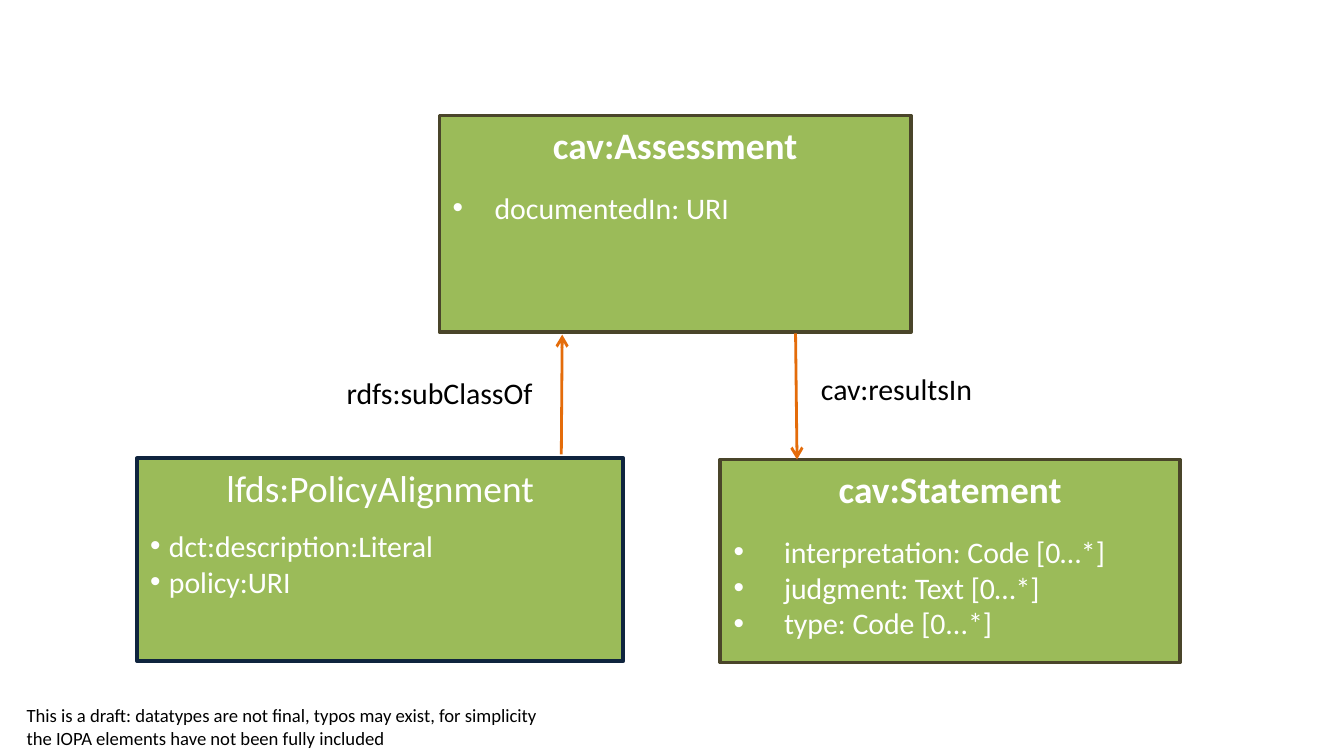
from lxml.etree import SubElement
from pptx import Presentation
from pptx.dml.color import RGBColor
from pptx.enum.shapes import MSO_CONNECTOR, MSO_SHAPE
from pptx.enum.text import MSO_ANCHOR, PP_ALIGN
from pptx.oxml.ns import qn
from pptx.util import Pt

FONT = "Calibri"
GREEN, BROWN, NAVY = "9BBB59", "4A452A", "0F243E"
ORANGE, WHITE, BLACK = "E46C0A", "FFFFFF", "000000"

CLASSES = [
    dict(title="cav:Assessment", bold=True, outline=BROWN, indent=22.5, gap=12,
         place=(235.4, 61.9, 252.7, 115.9), properties=["documentedIn: URI"]),
    dict(title="cav:Statement", bold=True, outline=BROWN, indent=27, gap=12,
         place=(385.9, 246.2, 246.2, 108.7),
         properties=["interpretation: Code [0…*]", "judgment: Text [0…*]", "type: Code [0...*]"]),
    dict(title="lfds:PolicyAlignment", bold=False, outline=NAVY, indent=10, gap=9.6,
         place=(73.4, 245.5, 260.6, 108.7),
         properties=["dct:description:Literal", "policy:URI"]),
]
ARROWS = [(426.2, 178.6, 427, 246.2), (300.7, 243.4, 301.2, 179.3)]
LABELS = [
    ("rdfs:subClassOf", 16, (178.6, 197.3, 126, 26.6)),
    ("cav:resultsIn", 16, (432.7, 195.1, 106.6, 26.6)),
    ("This is a draft: datatypes are not final, typos may exist, for simplicity "
     "the IOPA elements have not been fully included", 10, (7.2, 373.7, 292.3, 31.7)),
]


def color(value):
    return RGBColor.from_string(value)


def points(values):
    return [Pt(value) for value in values]


def write(para, text, size, ink, bold=False):
    para.text = text
    font = para.runs[0].font
    font.name, font.size, font.bold = FONT, Pt(size), bold
    font.color.rgb = color(ink)


def add_bullet(para, indent):
    properties = para._p.get_or_add_pPr()
    properties.set("marL", str(Pt(indent)))
    properties.set("indent", str(-Pt(indent)))
    SubElement(properties, qn("a:buFont")).set("typeface", "Arial")
    SubElement(properties, qn("a:buChar")).set("char", "•")


def add_class(page, item):
    box = page.shapes.add_shape(MSO_SHAPE.RECTANGLE, *points(item["place"]))
    box.shadow.inherit = False
    box.fill.solid()
    box.fill.fore_color.rgb = color(GREEN)
    box.line.color.rgb = color(item["outline"])
    box.line.width = Pt(2)
    frame = box.text_frame
    frame.word_wrap = True
    frame.vertical_anchor = MSO_ANCHOR.TOP
    heading = frame.paragraphs[0]
    heading.alignment = PP_ALIGN.CENTER
    heading.space_after = Pt(item["gap"])
    write(heading, item["title"], 20, WHITE, item["bold"])
    for text in item["properties"]:
        para = frame.add_paragraph()
        para.alignment = PP_ALIGN.LEFT
        write(para, text, 16, WHITE)
        add_bullet(para, item["indent"])


def add_arrow(page, ends):
    arrow = page.shapes.add_connector(MSO_CONNECTOR.STRAIGHT, *points(ends))
    arrow.line.color.rgb = color(ORANGE)
    arrow.line.width = Pt(1.5)
    SubElement(arrow.line._get_or_add_ln(), qn("a:tailEnd")).set("type", "arrow")
    SubElement(arrow._element.spPr, qn("a:effectLst"))


def add_label(page, text, size, place):
    frame = page.shapes.add_textbox(*points(place)).text_frame
    frame.word_wrap = True
    write(frame.paragraphs[0], text, size, BLACK)


def main():
    deck = Presentation()
    deck.slide_width, deck.slide_height = Pt(720), Pt(405)
    page = deck.slides.add_slide(deck.slide_layouts[6])
    for item in CLASSES:
        add_class(page, item)
    for ends in ARROWS:
        add_arrow(page, ends)
    for label in LABELS:
        add_label(page, *label)
    deck.save("out.pptx")


if __name__ == "__main__":
    main()
